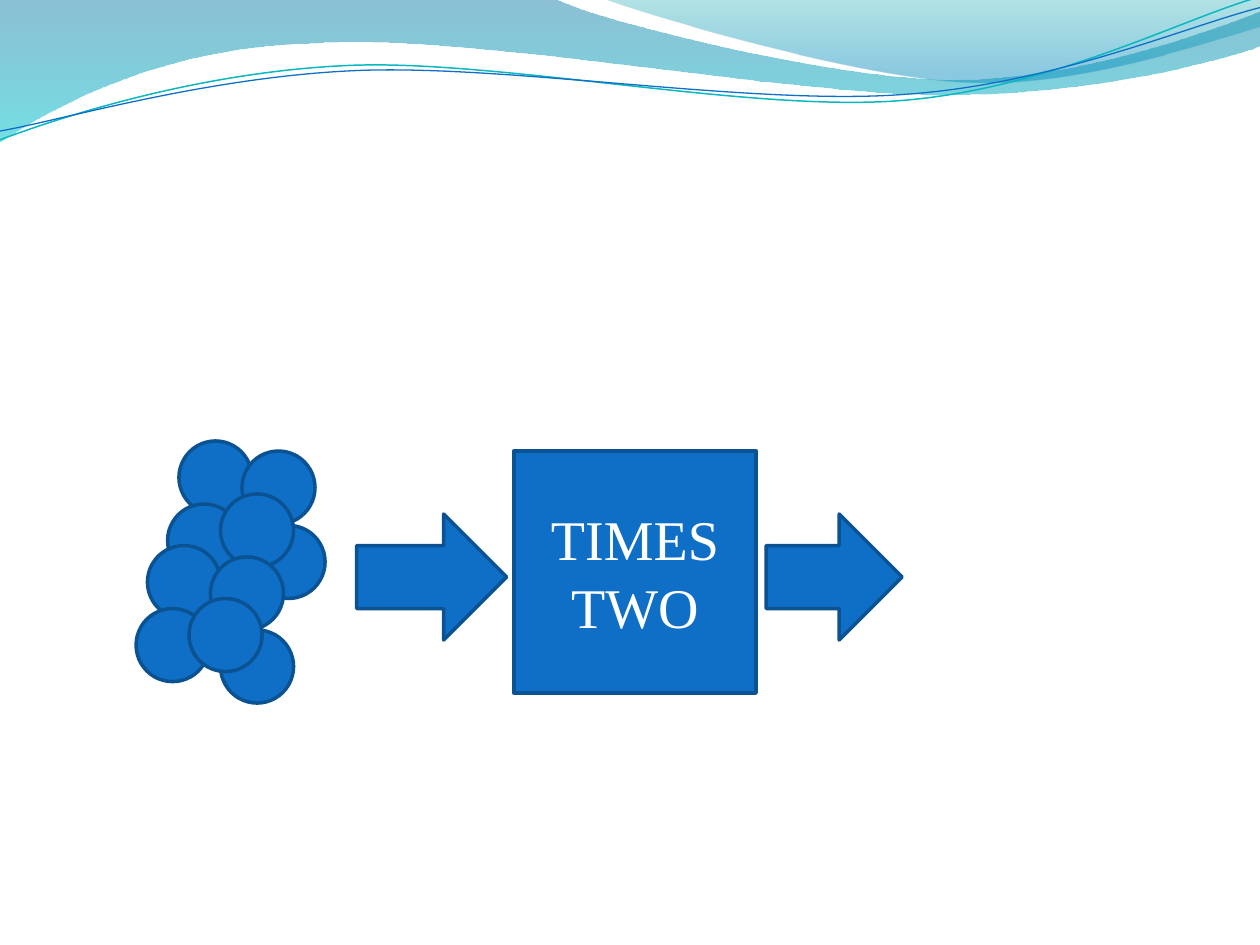
from math import cos, radians, sin

from lxml import etree
from pptx import Presentation
from pptx.dml.color import RGBColor
from pptx.enum.shapes import MSO_SHAPE
from pptx.enum.text import MSO_ANCHOR, PP_ALIGN
from pptx.oxml.ns import qn
from pptx.util import Inches, Pt

RECTANGLE, ARROW, OVAL = MSO_SHAPE.RECTANGLE, MSO_SHAPE.RIGHT_ARROW, MSO_SHAPE.OVAL
MIDDLE, CENTER = MSO_ANCHOR.MIDDLE, PP_ALIGN.CENTER
BLUE, DARK_BLUE, WHITE = "0F6FC6", "0B5292", "FFFFFF"
SEGMENT_TAGS = {1: "a:lnTo", 3: "a:cubicBezTo"}
STRAND_TILT = 2.7

BANDS = [
    ((-0.01, -0.01, 10.02, 1.14),
     [[(0, 0)], [(4.4, -0.01)], [(4.76, 0.17), (6.64, 0.63), (7.58, 0.63)],
      [(8.53, 0.63), (9.58, 0.26), (10, 0.09)], [(10.01, 0.36)],
      [(9.83, 0.44), (8.7, 0.76), (7.46, 0.75)],
      [(6.22, 0.75), (3.82, 0.28), (2.57, 0.34)],
      [(1.29, 0.36), (0.46, 0.83), (-0.01, 1.13)], [(0, 0)]],
     [(0, "0074A1", 45), (1, "00C6CF", 55)]),
    ((4.79, -0.01, 5.21, 0.7),
     [[(4.79, -0.01)], [(5.09, 0.11), (6.82, 0.62), (7.69, 0.65)],
      [(8.56, 0.69), (9.61, 0.32), (10, 0.21)], [(10, 0)], [(4.79, -0.01)]],
     [(0, "00A1A9", 30), (0.8, "008BBF", 45)]),
]
STRANDS = [
    ((-0.02, 0.22, 10.02, 0.71),
     [[(0, 1.11)], [(0.48, 0.93), (1.58, 0.57), (2.77, 0.52)],
      [(3.95, 0.47), (5.93, 0.89), (7.13, 0.8)],
      [(8.33, 0.71), (9.38, 0.15), (9.98, -0.02)]],
     "0AB8BF", 0.85),
    ((-0.02, 0.3, 10.03, 0.58),
     [[(0, 1.04)], [(0.47, 0.96), (1.64, 0.61), (2.83, 0.56)],
      [(4.03, 0.51), (5.97, 0.84), (7.17, 0.75)],
      [(8.36, 0.67), (9.41, 0.21), (10, 0.06)]],
     BLUE, 0.75),
]
MACHINE = (4.08, 3.58, 1.92, 1.92)
MACHINE_LABEL = "TIMES TWO"
ARROWS = [(2.83, 4.08, 1.19, 1), (6.08, 4.08, 1.08, 1)]
BALL_SIZE = 0.58
BALLS = [(1.42, 3.5), (1.92, 3.58), (1.33, 4), (2, 4.17), (1.75, 3.92),
         (1.17, 4.33), (1.67, 4.42), (1.08, 4.83), (1.75, 5), (1.5, 4.75)]


def color(value):
    return RGBColor.from_string(value)


def turn(point, center, degrees):
    dx, dy = point[0] - center[0], point[1] - center[1]
    c, s = cos(radians(degrees)), sin(radians(degrees))
    return center[0] + dx * c - dy * s, center[1] + dx * s + dy * c


def add_wave(shapes, box, segments, closed=False):
    left, top, width, height = map(Inches, box)
    builder = shapes.build_freeform(left, top)
    builder.add_line_segments([(left + width, top + height)], close=False)
    wave = builder.convert_to_shape()
    wave.shadow.inherit = False
    outline = next(wave._element.iter(qn("a:path")))
    for part in list(outline):
        outline.remove(part)
    for index, points in enumerate(segments):
        tag = SEGMENT_TAGS[len(points)] if index else "a:moveTo"
        segment = etree.SubElement(outline, qn(tag))
        for x, y in points:
            etree.SubElement(segment, qn("a:pt"),
                             x=str(Inches(x) - left), y=str(Inches(y) - top))
    if closed:
        etree.SubElement(outline, qn("a:close"))
    return wave


def add_band(shapes, box, segments, stops):
    band = add_wave(shapes, box, segments, closed=True)
    band.line.fill.background()
    band.fill.gradient()
    band.fill.gradient_angle = 270
    for stop, (position, hue, opacity) in zip(band.fill.gradient_stops, stops):
        stop.position = position
        stop.color.rgb = color(hue)
    hues = band._element.spPr.iter(qn("a:srgbClr"))
    for hue_element, (position, hue, opacity) in zip(hues, stops):
        etree.SubElement(hue_element, qn("a:alpha"), val=str(opacity * 1000))


def add_strand(shapes, box, segments, hue, width):
    center = (box[0] + box[2] / 2, box[1] + box[3] / 2)
    level = [[turn(point, center, STRAND_TILT) for point in points]
             for points in segments]
    strand = add_wave(shapes, box, level)
    strand.rotation = 360 - STRAND_TILT
    strand.fill.background()
    strand.line.color.rgb = color(hue)
    strand.line.width = Pt(width)


def add_part(shapes, preset, box):
    part = shapes.add_shape(preset, *map(Inches, box))
    part.shadow.inherit = False
    part.fill.solid()
    part.fill.fore_color.rgb = color(BLUE)
    part.line.color.rgb = color(DARK_BLUE)
    part.line.width = Pt(2)
    return part


def main():
    prs = Presentation()
    prs.slide_width, prs.slide_height = Inches(10), Inches(7.5)
    slide = prs.slides.add_slide(prs.slide_layouts[6])
    slide.background.fill.solid()
    slide.background.fill.fore_color.rgb = color(WHITE)
    shapes = slide.shapes

    for band in BANDS:
        add_band(shapes, *band)
    strands = shapes.add_group_shape().shapes
    for strand in STRANDS:
        add_strand(strands, *strand)

    label = add_part(shapes, RECTANGLE, MACHINE).text_frame
    label.word_wrap = True
    label.vertical_anchor = MIDDLE
    paragraph = label.paragraphs[0]
    paragraph.text = MACHINE_LABEL
    paragraph.alignment = CENTER
    paragraph.font.name = "Times New Roman"
    paragraph.font.size = Pt(32)
    paragraph.font.color.rgb = color(WHITE)

    for box in ARROWS:
        add_part(shapes, ARROW, box)
    balls = shapes.add_group_shape().shapes
    for left, top in BALLS:
        add_part(balls, OVAL, (left, top, BALL_SIZE, BALL_SIZE))

    prs.save("out.pptx")


if __name__ == "__main__":
    main()
